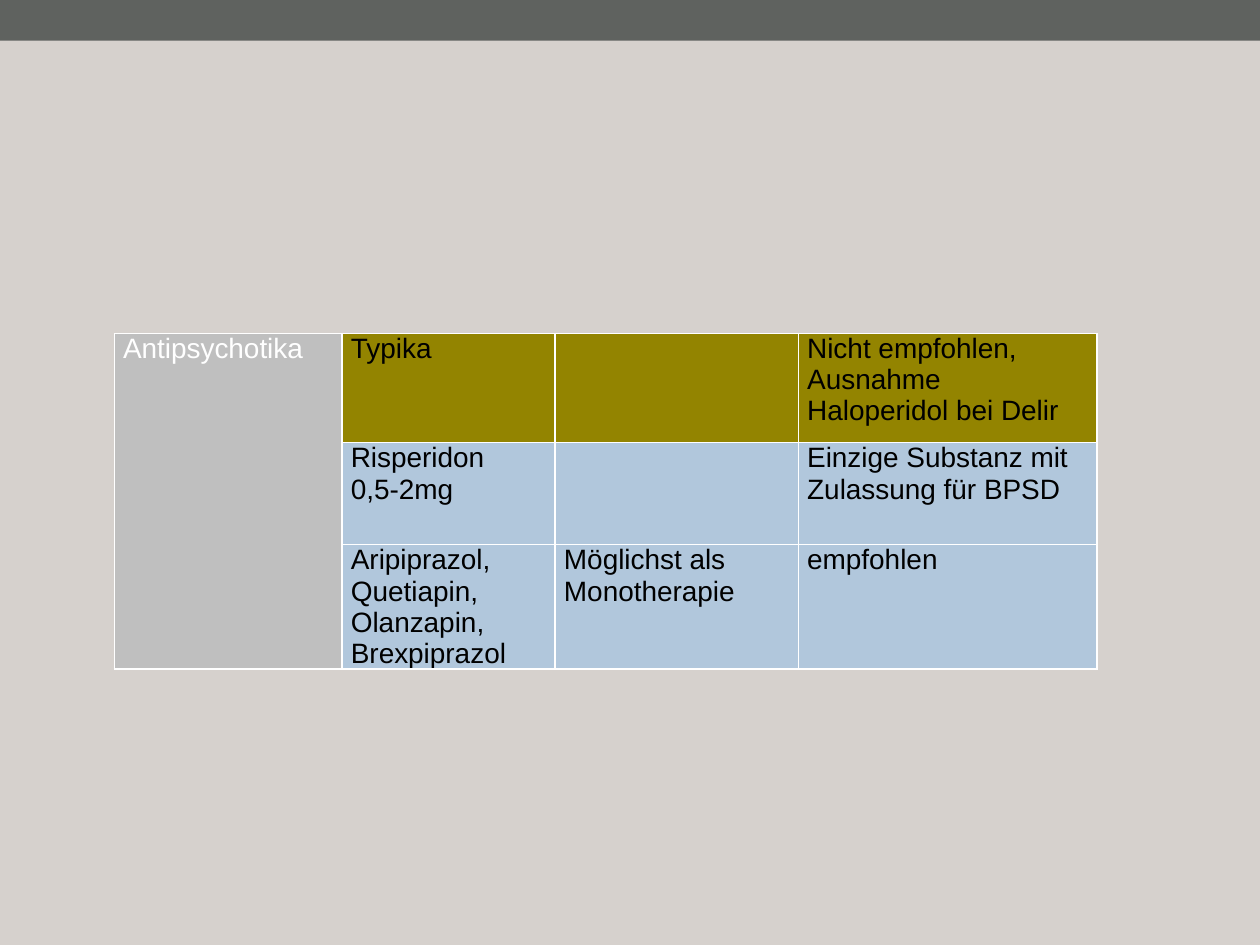
"""Build a slide with a table of antipsychotic recommendations."""
import pptx
import pptx.dml.color
import pptx.enum.shapes
import pptx.oxml
import pptx.oxml.ns
import pptx.util

Pt = pptx.util.Pt
Color = pptx.dml.color.RGBColor

BACKGROUND = Color(0xD6, 0xD1, 0xCD)
BAND = Color(0x5F, 0x62, 0x5F)
GREY = Color(0xBF, 0xBF, 0xBF)
OLIVE = Color(0x93, 0x84, 0x00)
BLUE = Color(0xB1, 0xC7, 0xDC)
WHITE = Color(0xFF, 0xFF, 0xFF)
BLACK = Color(0x00, 0x00, 0x00)

GROUP = "Antipsychotika"
ROWS = [
    (OLIVE, [["Typika"], [], ["Nicht empfohlen, Ausnahme Haloperidol bei Delir"]]),
    (BLUE, [["Risperidon", "0,5-2mg"], [], ["Einzige Substanz mit Zulassung für BPSD"]]),
    (BLUE, [["Aripiprazol, Quetiapin, Olanzapin, Brexpiprazol"],
            ["Möglichst als Monotherapie"], ["empfohlen"]]),
]
COLUMN_WIDTHS = [130.2, 121.8, 139, 170.6]
ROW_HEIGHTS = [62.4, 58.3, 58.3]
TABLE_LEFT, TABLE_TOP = 65.3, 190.6


def add_borders(cell):
    properties = cell._tc.get_or_add_tcPr()
    for position, side in enumerate(("lnL", "lnR", "lnT", "lnB")):
        line = pptx.oxml.parse_xml(
            f'<a:{side} {pptx.oxml.ns.nsdecls("a")} w="{Pt(1)}"><a:solidFill>'
            f'<a:srgbClr val="{WHITE}"/></a:solidFill></a:{side}>')
        properties.insert(position, line)


def fill_cell(cell, lines, fill, color):
    cell.margin_left = cell.margin_right = Pt(5)
    cell.margin_top = cell.margin_bottom = 0
    cell.fill.solid()
    cell.fill.fore_color.rgb = fill
    add_borders(cell)
    frame = cell.text_frame
    for index, line in enumerate(lines):
        para = frame.add_paragraph() if index else frame.paragraphs[0]
        span = para.add_run()
        span.text = line
        span.font.name = "Arial"
        span.font.size = Pt(16)
        span.font.bold = False
        span.font.color.rgb = color


def main():
    deck = pptx.Presentation()
    deck.slide_width, deck.slide_height = Pt(720), Pt(540)
    page = deck.slides.add_slide(deck.slide_layouts[6])
    page.background.fill.solid()
    page.background.fill.fore_color.rgb = BACKGROUND

    band = page.shapes.add_shape(
        pptx.enum.shapes.MSO_SHAPE.RECTANGLE, 0, 0, deck.slide_width, Pt(23.3))
    band.shadow.inherit = False
    band.fill.solid()
    band.fill.fore_color.rgb = BAND
    band.line.fill.background()

    table = page.shapes.add_table(
        len(ROW_HEIGHTS), len(COLUMN_WIDTHS), Pt(TABLE_LEFT), Pt(TABLE_TOP),
        Pt(sum(COLUMN_WIDTHS)), Pt(sum(ROW_HEIGHTS))).table
    table.first_row = table.horz_banding = False
    for column, width in zip(table.columns, COLUMN_WIDTHS):
        column.width = Pt(width)
    for row, height in zip(table.rows, ROW_HEIGHTS):
        row.height = Pt(height)

    for row_index, (fill, entries) in enumerate(ROWS):
        group_lines = [] if row_index else [GROUP]
        fill_cell(table.cell(row_index, 0), group_lines, GREY, WHITE)
        for column_index, lines in enumerate(entries, start=1):
            fill_cell(table.cell(row_index, column_index), lines, fill, BLACK)
    table.cell(0, 0).merge(table.cell(len(ROWS) - 1, 0))

    deck.save("out.pptx")


if __name__ == "__main__":
    main()
